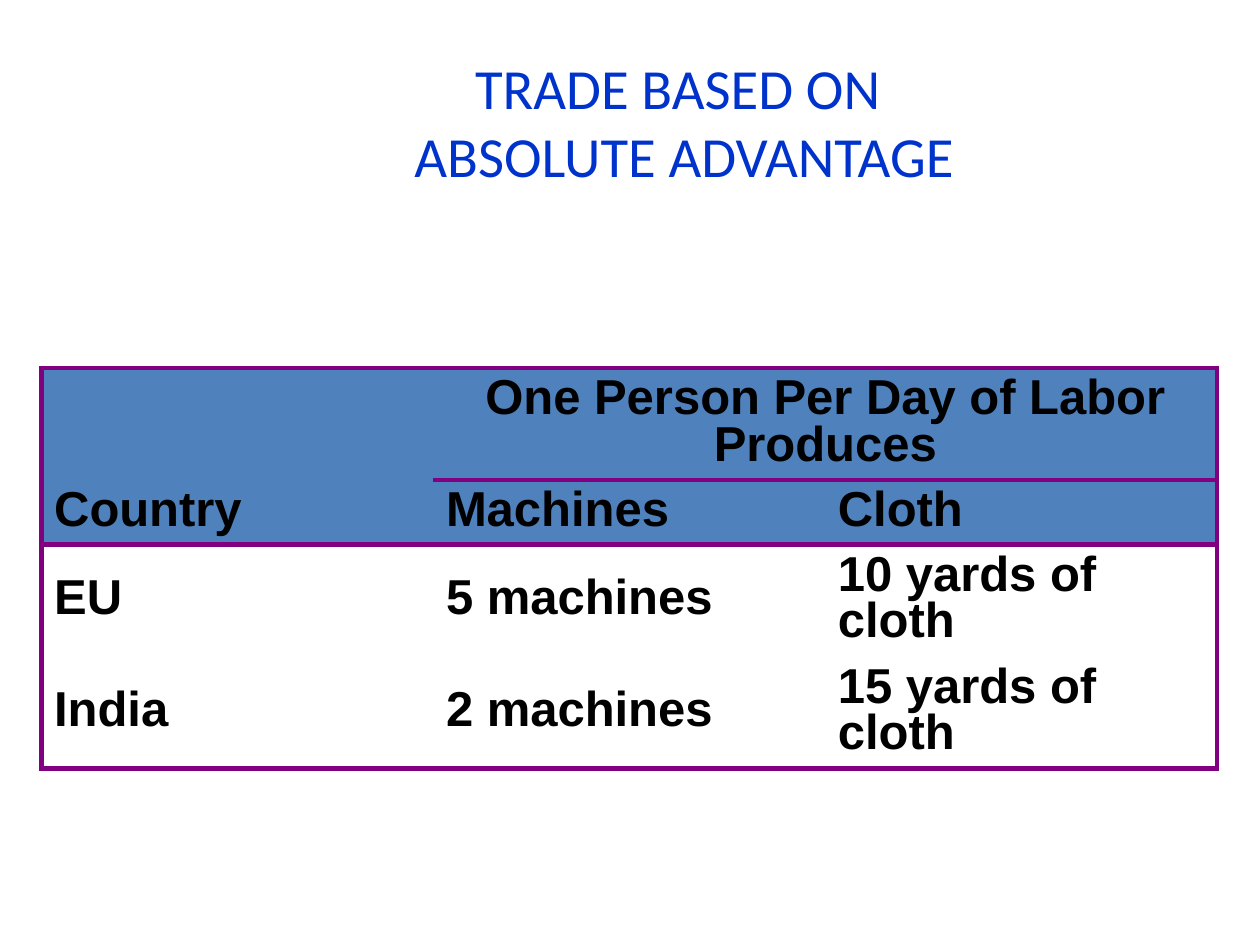
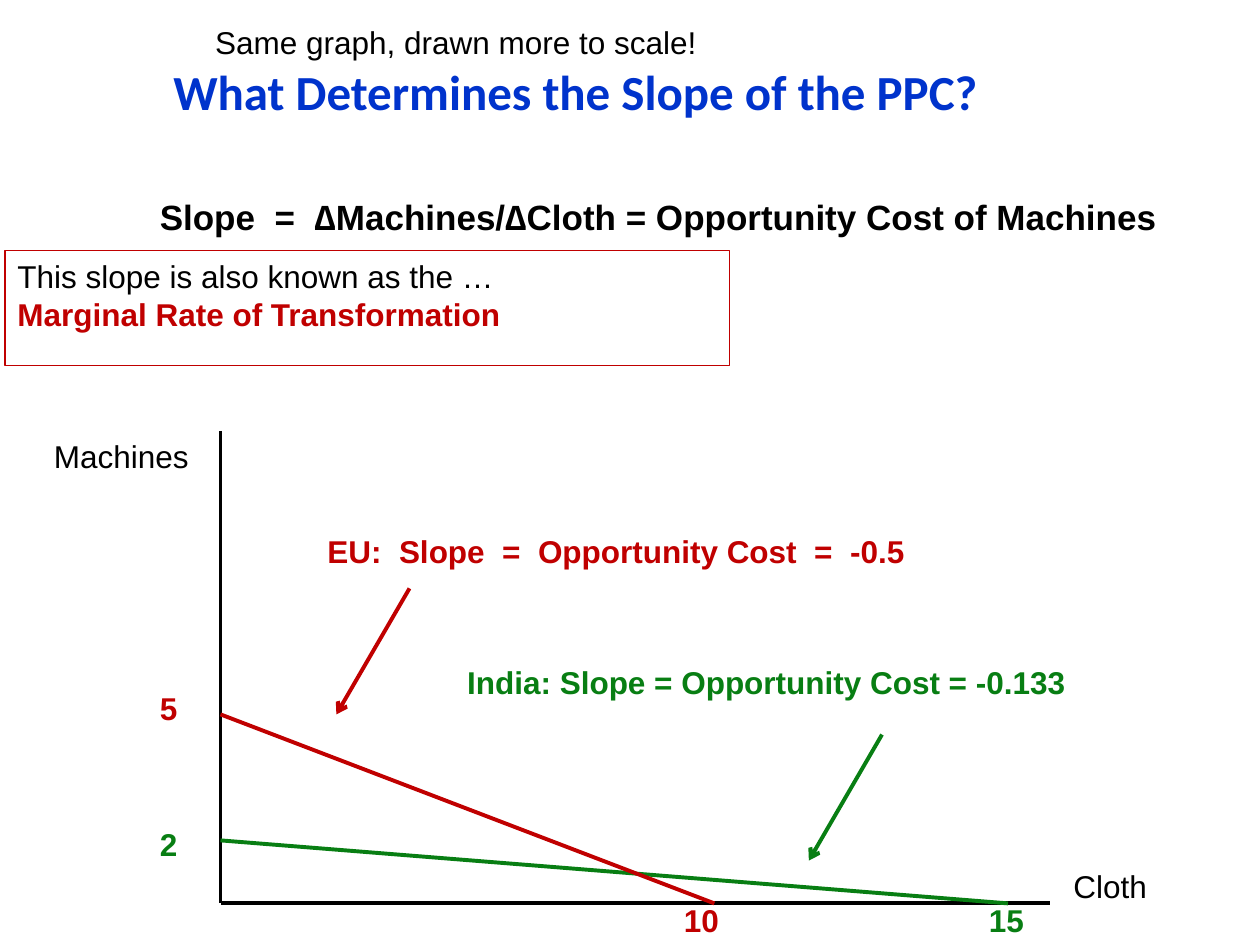
import pptx
import pptx.dml.color
import pptx.enum.shapes
import pptx.enum.text
import pptx.oxml.ns
import pptx.util
from lxml import etree

PX = 9144
COLORS = {
    "title": "0033CC",
    "text": "000000",
    "header": "4F81BD",
    "rule": "800080",
    "eu": "C00000",
    "india": "087E13",
}
ALIGN = pptx.enum.text.PP_ALIGN
ANCHOR = pptx.enum.text.MSO_ANCHOR


def emu(*lengths):
    return [pptx.util.Emu(length * PX) for length in lengths]


def rgb(color):
    return pptx.dml.color.RGBColor.from_string(COLORS[color])


def add_xml(parent, tag, **attributes):
    return etree.SubElement(parent, pptx.oxml.ns.qn(tag), attributes)


def write(frame, text, size=18, font="Arial", color="text", bold=False,
          align=ALIGN.LEFT, spacing=None):
    paragraph = frame.paragraphs[0]
    if paragraph.runs:
        paragraph = frame.add_paragraph()
    paragraph.alignment = align
    if spacing:
        paragraph.line_spacing = spacing
    for number, line in enumerate(text.split("\n")):
        if number:
            paragraph.add_line_break()
        run = paragraph.add_run()
        run.text = line
        run.font.size = pptx.util.Pt(size)
        run.font.name = font
        run.font.bold = bold
        run.font.color.rgb = rgb(color)


class Deck:
    def __init__(self):
        self.presentation = pptx.Presentation()
        self.presentation.slide_width, self.presentation.slide_height = emu(1000, 750)
        self.slide = None

    def add_slide(self, title, place, size, bold=False, anchor=ANCHOR.MIDDLE):
        layout = self.presentation.slide_layouts[5]
        self.slide = self.presentation.slides.add_slide(layout)
        heading = self.slide.shapes.title
        heading.left, heading.top, heading.width, heading.height = emu(*place)
        frame = heading.text_frame
        frame.auto_size = pptx.enum.text.MSO_AUTO_SIZE.NONE
        frame.vertical_anchor = anchor
        write(frame, title, size, "Calibri", "title", bold, ALIGN.CENTER)

    def label(self, text, x, y, width, height=40, **style):
        box = self.slide.shapes.add_textbox(*emu(x, y, width, height))
        box.text_frame.word_wrap = False
        write(box.text_frame, text, **style)

    def frame(self, x, y, width, height, color):
        box = self.slide.shapes.add_shape(
            pptx.enum.shapes.MSO_SHAPE.RECTANGLE, *emu(x, y, width, height))
        box.shadow.inherit = False
        box.fill.background()
        box.line.color.rgb = rgb(color)
        box.line.width = pptx.util.Pt(0.75)
        box.text_frame.word_wrap = True
        box.text_frame.vertical_anchor = ANCHOR.TOP
        return box.text_frame

    def line(self, start, end, color="text", arrow=False):
        connector = self.slide.shapes.add_connector(
            pptx.enum.shapes.MSO_CONNECTOR.STRAIGHT, *emu(*start, *end))
        connector.line.color.rgb = rgb(color)
        connector.line.width = pptx.util.Pt(2.25)
        if arrow:
            add_xml(connector.line._get_or_add_ln(), "a:tailEnd", type="arrow")
        add_xml(connector._element.spPr, "a:effectLst")

    def table(self, x, y, column_width, row_heights, rows):
        columns = len(rows[0])
        table = self.slide.shapes.add_table(
            len(rows), columns,
            *emu(x, y, column_width * columns, sum(row_heights))).table
        table.first_row = table.horz_banding = False
        for column in table.columns:
            column.width = emu(column_width)[0]
        for row, height in zip(table.rows, row_heights):
            row.height = emu(height)[0]
        return table

    def borders(self, cell, **edges):
        properties = cell._tc.get_or_add_tcPr()
        for position, (side, ruled) in enumerate(edges.items()):
            edge = add_xml(properties, "a:ln" + side, w=str(pptx.util.Pt(3)))
            if ruled:
                fill = add_xml(edge, "a:solidFill")
                add_xml(fill, "a:srgbClr", val=COLORS["rule"])
            else:
                add_xml(edge, "a:noFill")
            properties.insert(position, edge)


def absolute_advantage(deck):
    deck.add_slide("TRADE BASED ON \nABSOLUTE ADVANTAGE", (136, 37, 814, 118),
                   32.4, anchor=ANCHOR.BOTTOM)
    output = [
        ["", "One Person Per Day of Labor Produces", ""],
        ["Country", "Machines", "Cloth"],
        ["EU", "5 machines", "10 yards of cloth"],
        ["India", "2 machines", "15 yards of cloth"],
    ]
    table = deck.table(33, 292, 311, [89, 51, 89, 89], output)
    table.cell(0, 1).merge(table.cell(0, 2))
    ruled_columns = [(0, 1, 2), (1, 2), (0, 1, 2), (), (0, 1, 2)]
    for r, row in enumerate(output):
        for c, text in enumerate(row):
            cell = table.cell(r, c)
            cell.vertical_anchor = ANCHOR.MIDDLE
            if r < 2:
                cell.fill.solid()
                cell.fill.fore_color.rgb = rgb("header")
            else:
                cell.fill.background()
            if text:
                write(cell.text_frame, text, 28, bold=True, spacing=0.85,
                      align=ALIGN.LEFT if r else ALIGN.CENTER)
            deck.borders(cell, L=c == 0, R=c == 2 or cell.is_merge_origin,
                         T=c in ruled_columns[r], B=c in ruled_columns[r + 1])


def slope_of_ppc(deck):
    deck.add_slide("What Determines the Slope of the PPC? ", (28, 29, 866, 87),
                   28, bold=True)
    deck.label("Same graph, drawn more to scale!", 161, 13, 406)
    deck.label("Slope  =  ∆Machines/∆Cloth = Opportunity Cost of Machines",
               117, 150, 817, 44, size=20, bold=True)
    definition = deck.frame(4, 199, 575, 91, "eu")
    write(definition, "This slope is also known as the …")
    write(definition, "Marginal Rate of Transformation", color="eu", bold=True)

    origin_x, origin_y = 175, 717
    deck.line((origin_x, 342), (origin_x, origin_y))
    deck.line((833, origin_y), (origin_x, origin_y))
    deck.label("Machines", 33, 342, 128)
    deck.label("Cloth", 842, 683, 79)

    frontiers = [
        ("india", "2", 667, 650, "15", 800, 775,
         "India: Slope = Opportunity Cost = -0.133", (361, 521, 500), (700, 583)),
        ("eu", "5", 567, 542, "10", 567, 533,
         "EU:  Slope  =  Opportunity Cost  =  -0.5", (250, 417, 483), (325, 467)),
    ]
    for (country, machines, machines_y, machines_top, cloth, cloth_x, cloth_left,
         slope, slope_place, (pointer_x, pointer_y)) in frontiers:
        style = {"color": country, "bold": True}
        deck.line((origin_x, machines_y), (cloth_x, origin_y), country)
        deck.label(machines, 117, machines_top, 34, **style)
        deck.label(cloth, cloth_left, 710, 48, **style)
        deck.label(slope, *slope_place, **style)
        deck.line((pointer_x, pointer_y), (pointer_x - 58, pointer_y + 100),
                  country, arrow=True)


def main():
    deck = Deck()
    absolute_advantage(deck)
    slope_of_ppc(deck)
    deck.presentation.save("out.pptx")


if __name__ == "__main__":
    main()
